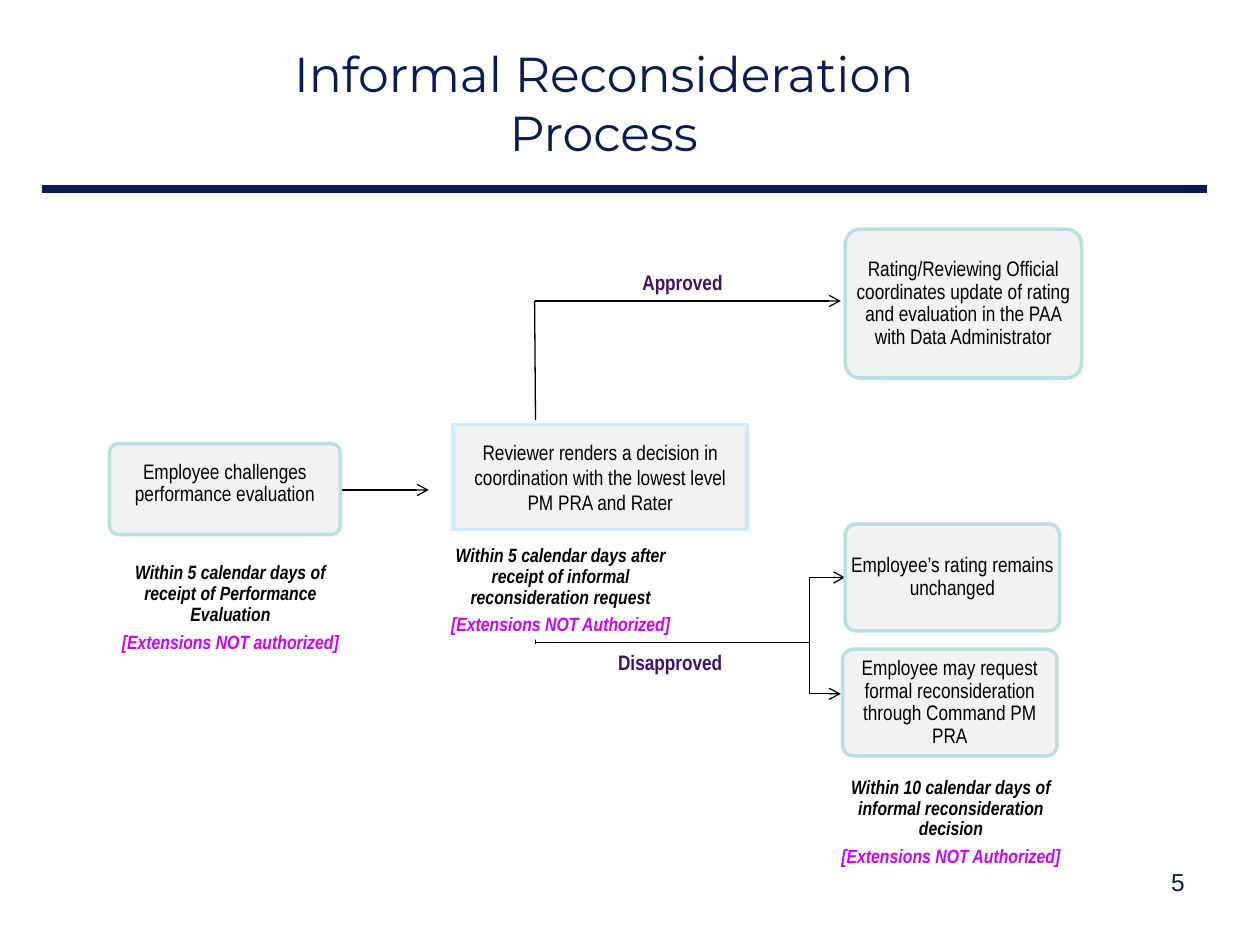
from dataclasses import dataclass
from typing import Optional

from lxml import etree
from pptx import Presentation
from pptx.dml.color import RGBColor
from pptx.enum import shapes, text
from pptx.oxml.ns import qn
from pptx.util import Pt


@dataclass(frozen=True)
class Theme:
    navy: str = "081D54"
    ink: str = "000000"
    plum: str = "3F1270"
    pink: str = "CC00FF"
    grey: str = "F2F2F2"
    white: str = "FFFFFF"
    teal: str = "BBE0E3"
    sky: str = "CCECFF"
    head: str = "Montserrat"
    body: str = "Arial Narrow"
    plain: str = "Arial"
    title: float = 28
    page: float = 14
    step: float = 12
    note: float = 11


T = Theme()
KIND = shapes.MSO_SHAPE
MID = text.MSO_ANCHOR.MIDDLE
TOP = text.MSO_ANCHOR.TOP
MARGINS = (7.2, 3.6, 7.2, 3.6)


@dataclass(frozen=True)
class Area:
    left: float
    top: float
    width: float
    height: float

    def span(self) -> tuple:
        return Pt(self.left), Pt(self.top), Pt(self.width), Pt(self.height)


@dataclass(frozen=True)
class Card:
    area: Area
    words: str
    edge: str = T.teal
    round: bool = True
    tight: Optional[float] = 0.9
    inset: tuple = (1, 1, 1, 1)


@dataclass(frozen=True)
class Note:
    area: Area
    words: str
    limit: str
    fill: Optional[str] = T.white


@dataclass(frozen=True)
class Label:
    area: Area
    words: str
    size: float
    font: str
    color: str
    bold: bool = False
    align: text.PP_ALIGN = text.PP_ALIGN.CENTER
    anchor: text.MSO_ANCHOR = TOP


@dataclass(frozen=True)
class Link:
    start: tuple
    end: tuple
    color: str = T.ink
    width: float = 0.75
    ends: tuple = ()
    bend: Optional[float] = None


def style(para, size: float, font: str, color: str, bold=False, slant=False,
          align=text.PP_ALIGN.CENTER, tight=None) -> None:
    para.alignment = align
    if tight:
        para.line_spacing = tight
        para.space_after = Pt(4)
    para.font.size = Pt(size)
    para.font.name = font
    para.font.bold = bold
    para.font.italic = slant
    para.font.color.rgb = RGBColor.from_string(color)


def frame(shape, anchor, inset: tuple = MARGINS):
    body = shape.text_frame
    body.word_wrap = True
    body.vertical_anchor = anchor
    (body.margin_left, body.margin_top,
     body.margin_right, body.margin_bottom) = map(Pt, inset)
    return body


def block(slide, area: Area, kind, fill: Optional[str], edge: Optional[str] = None):
    shape = slide.shapes.add_shape(kind, *area.span())
    shape.shadow.inherit = False
    if fill:
        shape.fill.solid()
        shape.fill.fore_color.rgb = RGBColor.from_string(fill)
    else:
        shape.fill.background()
    if edge:
        shape.line.color.rgb = RGBColor.from_string(edge)
        shape.line.width = Pt(2)
    else:
        shape.line.fill.background()
    return shape


def draw_card(slide, card: Card) -> None:
    kind = KIND.ROUNDED_RECTANGLE if card.round else KIND.RECTANGLE
    shape = block(slide, card.area, kind, T.grey, card.edge)
    if card.round:
        shape.adjustments[0] = 0.1
    body = frame(shape, MID, card.inset)
    body.text = card.words
    for para in body.paragraphs:
        style(para, T.step, T.body, T.ink, tight=card.tight)


def draw_note(slide, note: Note) -> None:
    shape = block(slide, note.area, KIND.ROUNDED_RECTANGLE, note.fill)
    body = frame(shape, TOP)
    body.text = f"{note.words}\n{note.limit}"
    for para, color in zip(body.paragraphs, (T.ink, T.pink)):
        style(para, T.note, T.body, color, bold=True, slant=True, tight=0.9)


def draw_label(slide, label: Label) -> None:
    body = frame(slide.shapes.add_textbox(*label.area.span()), label.anchor)
    body.text = label.words
    style(body.paragraphs[0], label.size, label.font, label.color,
          bold=label.bold, align=label.align)


def draw_link(slide, link: Link) -> None:
    kind = shapes.MSO_CONNECTOR.ELBOW if link.bend else shapes.MSO_CONNECTOR.STRAIGHT
    line = slide.shapes.add_connector(kind, *map(Pt, link.start + link.end))
    line.line.color.rgb = RGBColor.from_string(link.color)
    line.line.width = Pt(link.width)
    props = line._element.spPr
    for end in link.ends:
        etree.SubElement(props.find(qn("a:ln")), qn(f"a:{end}"), type="arrow")
    etree.SubElement(props, qn("a:effectLst"))
    if link.bend:
        guides = props.find(qn("a:prstGeom")).find(qn("a:avLst"))
        etree.SubElement(guides, qn("a:gd"), name="adj1",
                         fmla=f"val {round(link.bend * 100000)}")


TAIL = ("tailEnd",)
LINKS = [
    Link((24, 108), (690, 108), T.navy, 4.5),
    Link((184.5, 280), (245, 280), ends=TAIL),
    Link((483, 330), (480.5, 396.5), ends=("headEnd", "tailEnd"), bend=8.2),
    Link((306, 367), (462.5, 367)),
    Link((306, 307), (306, 368)),
    Link((305.5, 172), (480.5, 172), ends=TAIL),
    Link((305.5, 172), (306, 240)),
]
CARDS = [
    Card(Area(62.5, 253.5, 132, 52), "Employee challenges performance evaluation",
         inset=(1, 1, 1, 7)),
    Card(Area(483, 131, 135, 85),
         "Rating/Reviewing Official coordinates update of rating "
         "and evaluation in the PAA with Data Administrator", inset=(2, 2, 2, 2)),
    Card(Area(481.5, 371, 122.5, 61),
         "Employee may request formal reconsideration through Command PM\vPRA"),
    Card(Area(483, 299.5, 122.5, 61), "Employee’s rating remains unchanged"),
    Card(Area(259, 242.5, 168, 60),
         "Reviewer renders a decision in coordination with the lowest level "
         "PM PRA and Rater", T.sky, False, None, MARGINS),
]
NOTES = [
    Note(Area(57.5, 315.5, 148.5, 58),
         "Within 5 calendar days of receipt of Performance Evaluation",
         "[Extensions NOT authorized]", None),
    Note(Area(239, 305.5, 163, 60),
         "Within 5 calendar days after receipt of informal reconsideration request",
         "[Extensions NOT Authorized]"),
    Note(Area(462, 438, 163, 57),
         "Within 10 calendar days of informal reconsideration decision",
         "[Extensions NOT Authorized]"),
]
LABELS = [
    Label(Area(132, 14.5, 426, 88), "Informal Reconsideration Process",
          T.title, T.head, T.navy, anchor=MID),
    Label(Area(353, 150.5, 74, 22), "Approved", T.step, T.body, T.plum, True),
    Label(Area(342, 367.5, 82, 22), "Disapproved", T.step, T.body, T.plum, True),
    Label(Area(516, 492, 168, 37), "5", T.page, T.plain, T.navy,
          align=text.PP_ALIGN.RIGHT),
]


def main() -> None:
    deck = Presentation()
    deck.slide_width, deck.slide_height = Pt(720), Pt(540)
    slide = deck.slides.add_slide(deck.slide_layouts[6])
    for draw, items in ((draw_link, LINKS), (draw_note, NOTES),
                        (draw_card, CARDS), (draw_label, LABELS)):
        for item in items:
            draw(slide, item)
    deck.save("out.pptx")


if __name__ == "__main__":
    main()
